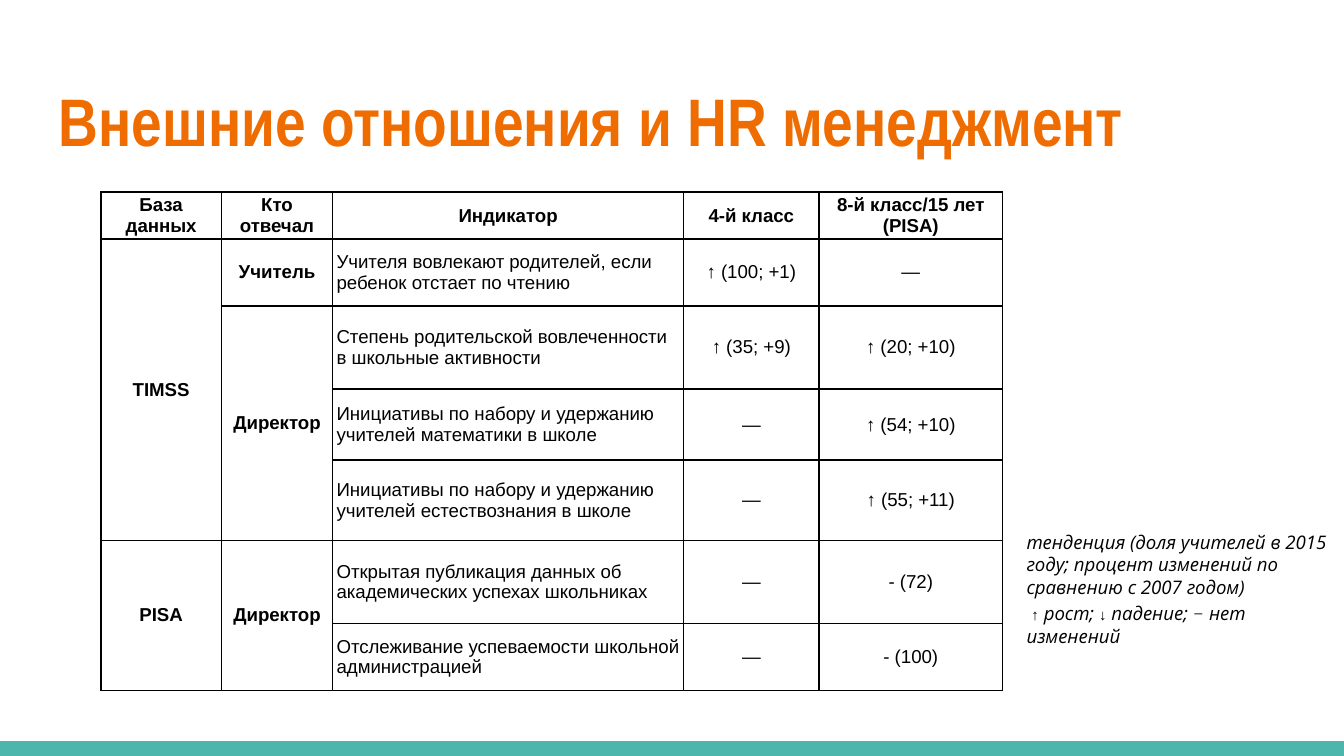
"""Build the slide on external relations and HR management indicators."""
from dataclasses import dataclass

from lxml import etree
from pptx import Presentation, util as u
from pptx.dml.color import RGBColor
from pptx.enum import shapes, text
from pptx.oxml.ns import qn


@dataclass(frozen=True)
class Theme:
    title: str = "EF6C00"
    bar: str = "4DB6AC"
    ink: str = "000000"
    muted: str = "695D46"
    paper: str = "FFFFFF"
    title_pt: int = 36
    body_pt: int = 10
    arrow_pt: int = 8
    dash_pt: int = 12
    border_pt: int = 1


T = Theme()
W = 10
H = W * 9 / 16
BAR_H = 0.11

TITLE = "Внешние отношения и HR менеджмент"
HEADERS = ["База данных", "Кто отвечал", "Индикатор", "4-й класс", "8-й класс/15 лет (PISA)"]
GROUPS = [
    ("TIMSS", [
        ("Учитель", [
            ("Учителя вовлекают родителей, если ребенок отстает по чтению", "↑ (100; +1)", "—"),
        ]),
        ("Директор", [
            ("Степень родительской вовлеченности в школьные активности", "↑ (35; +9)", "↑ (20; +10)"),
            ("Инициативы по набору и удержанию учителей математики в школе", "—", "↑ (54; +10)"),
            ("Инициативы по набору и удержанию учителей естествознания в школе", "—", "↑ (55; +11)"),
        ]),
    ]),
    ("PISA", [
        ("Директор", [
            ("Открытая публикация данных об академических успехах школьниках", "—", "- (72)"),
            ("Отслеживание успеваемости школьной администрацией", "—", "- (100)"),
        ]),
    ]),
]
TABLE_BOX = (0.75, 1.43, 6.71, 3.71)
COL_SHARES = [0.9, 0.83, 2.62, 1.01, 1.37]
ROW_SHARES = [0.35, 0.5, 0.62, 0.53, 0.6, 0.62, 0.5]
INDICATOR = 2

STYLES = {
    "note": ("Open Sans", T.body_pt, T.ink, True),
    "arrow": ("Arial", T.arrow_pt, T.ink, False),
    "dash": ("Calibri", T.dash_pt, T.muted, False),
}
LEGEND = [
    [("тенденция (доля учителей в 2015 году; процент изменений по сравнению с 2007 годом)", "note")],
    [(" ", "note"), ("↑", "arrow"), (" рост; ", "note"), ("↓", "arrow"),
     (" падение; ", "note"), ("– ", "dash"), ("нет изменений", "note")],
]


def style(font, name, size, color, bold=False, italic=False):
    font.name, font.size, font.bold, font.italic = name, u.Pt(size), bold, italic
    font.color.rgb = RGBColor.from_string(color)


def share_out(total, shares):
    return [u.Inches(total * share / sum(shares)) for share in shares]


def add_text_box(s, *box):
    tf = s.shapes.add_textbox(*map(u.Inches, box)).text_frame
    tf.word_wrap = True
    tf.margin_left = tf.margin_right = tf.margin_top = tf.margin_bottom = u.Inches(0.1)
    return tf


def add_borders(cell):
    tc_pr = cell._tc.get_or_add_tcPr()
    for i, side in enumerate(("lnL", "lnR", "lnT", "lnB")):
        ln = etree.Element(qn(f"a:{side}"), w=str(u.Pt(T.border_pt)))
        fill = etree.SubElement(ln, qn("a:solidFill"))
        etree.SubElement(fill, qn("a:srgbClr"), val=T.ink)
        tc_pr.insert(i, ln)


def fill_cell(cell, words, bold, centred):
    cell.text = words
    p = cell.text_frame.paragraphs[0]
    p.alignment = text.PP_ALIGN.CENTER if centred else text.PP_ALIGN.LEFT
    style(p.font, "Arial", T.body_pt, T.ink, bold)


def add_group(table, words, col, first, last):
    if last > first:
        table.cell(first, col).merge(table.cell(last, col))
    fill_cell(table.cell(first, col), words, True, True)


def add_table(s):
    table = s.shapes.add_table(len(ROW_SHARES), len(COL_SHARES), *map(u.Inches, TABLE_BOX)).table
    for col, width in zip(table.columns, share_out(TABLE_BOX[2], COL_SHARES)):
        col.width = width
    for row, height in zip(table.rows, share_out(TABLE_BOX[3], ROW_SHARES)):
        row.height = height
    for cell in table.iter_cells():
        cell.margin_left = cell.margin_right = u.Inches(0.03)
        cell.margin_top = cell.margin_bottom = 0
        cell.vertical_anchor = text.MSO_ANCHOR.MIDDLE
        cell.fill.solid()
        cell.fill.fore_color.rgb = RGBColor.from_string(T.paper)
        style(cell.text_frame.paragraphs[0].font, "Arial", T.body_pt, T.ink)
        add_borders(cell)
    for c, words in enumerate(HEADERS):
        fill_cell(table.cell(0, c), words, True, True)
    row = 1
    for database, people in GROUPS:
        first = row
        for person, lines in people:
            start = row
            for line in lines:
                for c, words in enumerate(line, INDICATOR):
                    fill_cell(table.cell(row, c), words, False, c != INDICATOR)
                row += 1
            add_group(table, person, 1, start, row - 1)
        add_group(table, database, 0, first, row - 1)


def add_legend(s):
    tf = add_text_box(s, 7.54, 3.85, 2.52, 1.15)
    for i, runs in enumerate(LEGEND):
        p = tf.add_paragraph() if i else tf.paragraphs[0]
        for words, kind in runs:
            name, size, color, italic = STYLES[kind]
            r = p.add_run()
            r.text = words
            style(r.font, name, size, color, italic=italic)


def main():
    prs = Presentation()
    prs.slide_width, prs.slide_height = u.Inches(W), u.Inches(H)
    s = prs.slides.add_slide(prs.slide_layouts[6])

    bar = s.shapes.add_shape(shapes.MSO_SHAPE.RECTANGLE, 0, u.Inches(H - BAR_H),
                             prs.slide_width, u.Inches(BAR_H))
    bar.shadow.inherit = False
    bar.fill.solid()
    bar.fill.fore_color.rgb = RGBColor.from_string(T.bar)
    bar.line.fill.background()

    p = add_text_box(s, 0.34, 0.49, 9.32, 0.77).paragraphs[0]
    p.text = TITLE
    style(p.font, "Arial Narrow", T.title_pt, T.title, bold=True)

    add_table(s)
    add_legend(s)
    prs.save("out.pptx")


if __name__ == "__main__":
    main()
